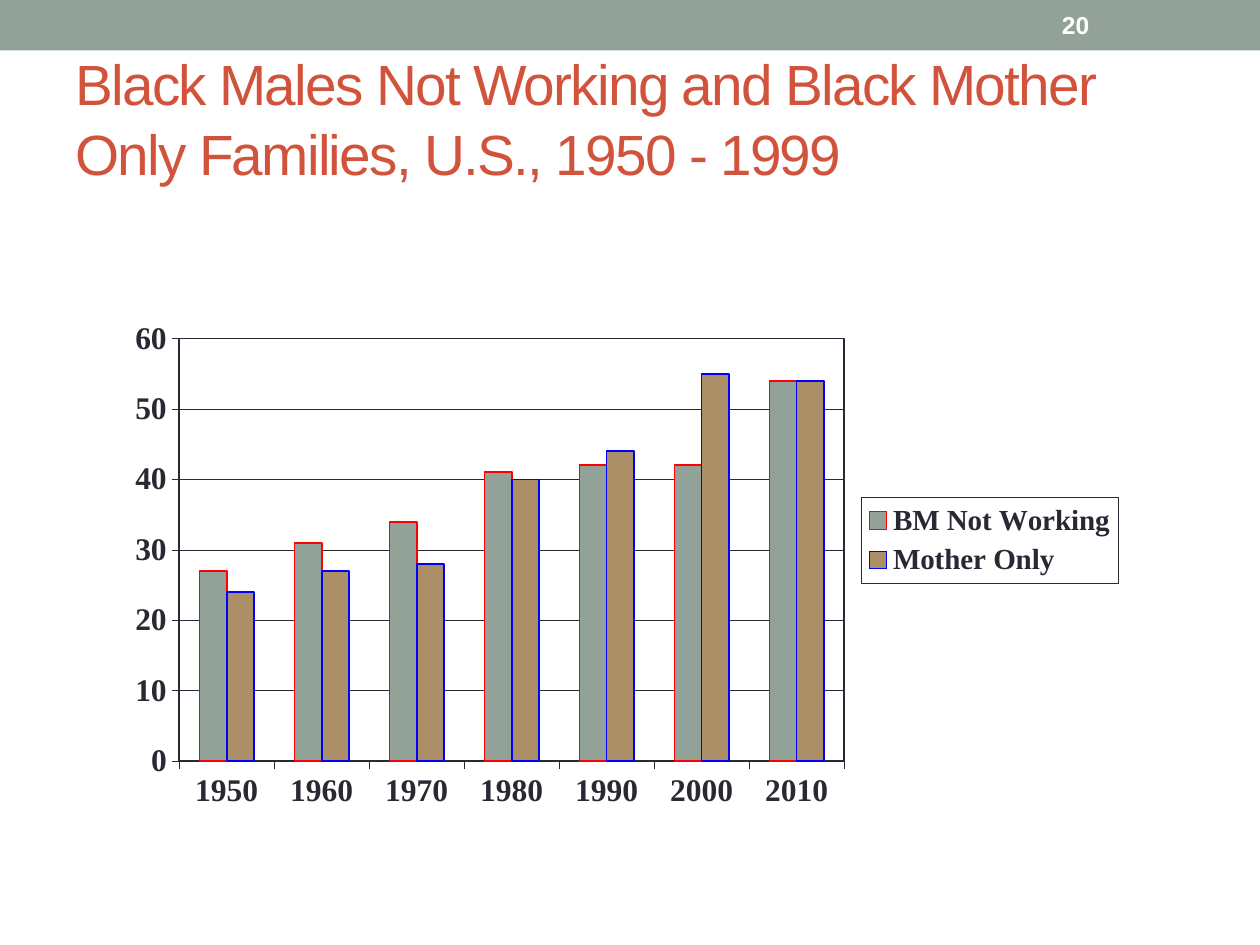
"""Build a slide comparing two population shares by decade in a column chart."""
from lxml import etree
from pptx import Presentation
from pptx.chart.data import CategoryChartData
from pptx.dml.color import RGBColor
from pptx.enum.chart import XL_CHART_TYPE as ChartType, XL_LEGEND_POSITION as LegendPos
from pptx.enum.chart import XL_TICK_MARK as TickMark
from pptx.enum.shapes import MSO_SHAPE as Shape
from pptx.enum.text import MSO_ANCHOR as Anchor
from pptx.oxml import parse_xml
from pptx.oxml.ns import nsdecls, qn
from pptx.util import Inches, Pt

SAGE = RGBColor(0x93, 0xA2, 0x99)
TAN = RGBColor(0xAD, 0x8F, 0x67)
RUST = RGBColor(0xD2, 0x53, 0x3C)
INK = RGBColor(0x29, 0x29, 0x34)
RED = RGBColor(0xFF, 0, 0)
BLUE = RGBColor(0, 0, 0xFF)
WHITE = RGBColor(0xFF, 0xFF, 0xFF)

TITLE = "Black Males Not Working and Black Mother Only Families, U.S., 1950 - 1999"
PAGE = "20"
YEARS = [str(year) for year in range(1950, 2011, 10)]
SERIES = [
    ("BM Not Working", (27, 31, 34, 41, 42, 42, 54), SAGE, RED),
    ("Mother Only", (24, 27, 28, 40, 44, 55, 54), TAN, BLUE),
]
PLOT_BOX = (0.073, 0.086, 0.629, 0.764)
LEGEND_BOX = (0.718, 0.373, 0.243, 0.155)


def add_text(s, box, text, size, color, bold=False):
    tb = s.shapes.add_textbox(*map(Inches, box))
    tf = tb.text_frame
    tf.word_wrap = True
    tf.vertical_anchor = Anchor.MIDDLE
    tf.text = text
    p = tf.paragraphs[0]
    f = p.runs[0].font
    f.name, f.size, f.bold = "Arial", Pt(size), bold
    f.color.rgb = color
    return p


def set_font(font, size):
    font.name, font.size, font.bold = "Times New Roman", Pt(size), True
    font.color.rgb = INK


def set_line(line, color, width):
    line.color.rgb = color
    line.width = Pt(width)


def manual_layout(box, inner=False):
    layout = etree.Element(qn("c:layout"))
    manual = etree.SubElement(layout, qn("c:manualLayout"))
    items = [("layoutTarget", "inner")] if inner else []
    items += [("xMode", "edge"), ("yMode", "edge"), *zip("xywh", box)]
    for tag, value in items:
        etree.SubElement(manual, qn("c:" + tag)).set("val", str(value))
    return layout


def outline(width):
    return parse_xml(
        f'<c:spPr {nsdecls("c", "a")}><a:noFill/><a:ln w="{Pt(width)}">'
        f'<a:solidFill><a:srgbClr val="{INK}"/></a:solidFill></a:ln></c:spPr>')


def add_columns(s):
    data = CategoryChartData()
    data.categories = YEARS
    for name, values, _, _ in SERIES:
        data.add_series(name, values)
    box = map(Inches, (0.81, 2.31, 8.39, 4.39))
    chart = s.shapes.add_chart(ChartType.COLUMN_CLUSTERED, *box, data).chart
    chart.has_title = False
    set_font(chart.font, 18)
    plot = chart.plots[0]
    plot.gap_width, plot.overlap, plot.vary_by_categories = 150, 0, False
    for ser, (_, _, fill, line) in zip(plot.series, SERIES):
        ser.format.fill.solid()
        ser.format.fill.fore_color.rgb = fill
        set_line(ser.format.line, line, 1)
    for axis in (chart.category_axis, chart.value_axis):
        axis.major_tick_mark = TickMark.OUTSIDE
        axis.minor_tick_mark = TickMark.NONE
        set_font(axis.tick_labels.font, 18)
        set_line(axis.format.line, INK, 0.25)
    va = chart.value_axis
    va.minimum_scale, va.maximum_scale, va.major_unit = 0, 60, 10
    set_line(va.major_gridlines.format.line, INK, 0.25)
    chart.has_legend = True
    legend = chart.legend
    legend.position = LegendPos.RIGHT
    legend.include_in_layout = False
    set_font(legend.font, 16.6)

    area = chart.element.find(".//" + qn("c:plotArea"))
    leg = chart.element.find(".//" + qn("c:legend"))
    for parent in (area, leg):
        for old in parent.findall(qn("c:layout")):
            parent.remove(old)
    area.insert(0, manual_layout(PLOT_BOX, inner=True))
    area.append(outline(1))
    leg.find(qn("c:legendPos")).addnext(manual_layout(LEGEND_BOX))
    leg.find(qn("c:txPr")).addprevious(outline(0.25))


def main():
    prs = Presentation()
    prs.slide_width, prs.slide_height = Inches(10), Inches(7.5)
    s = prs.slides.add_slide(prs.slide_layouts[6])
    band = s.shapes.add_shape(Shape.RECTANGLE, 0, 0, Inches(10), Inches(0.4))
    band.shadow.inherit = False
    band.fill.solid()
    band.fill.fore_color.rgb = SAGE
    band.line.fill.background()
    p = add_text(s, (0.5, 0.3, 9, 1.25), TITLE, 32.4, RUST)
    p.line_spacing = 1.04
    p.runs[0].font._element.set("spc", "-100")
    add_columns(s)
    add_text(s, (8.33, 0.02, 1.17, 0.36), PAGE, 14, WHITE, bold=True)
    prs.save("out.pptx")


if __name__ == "__main__":
    main()
